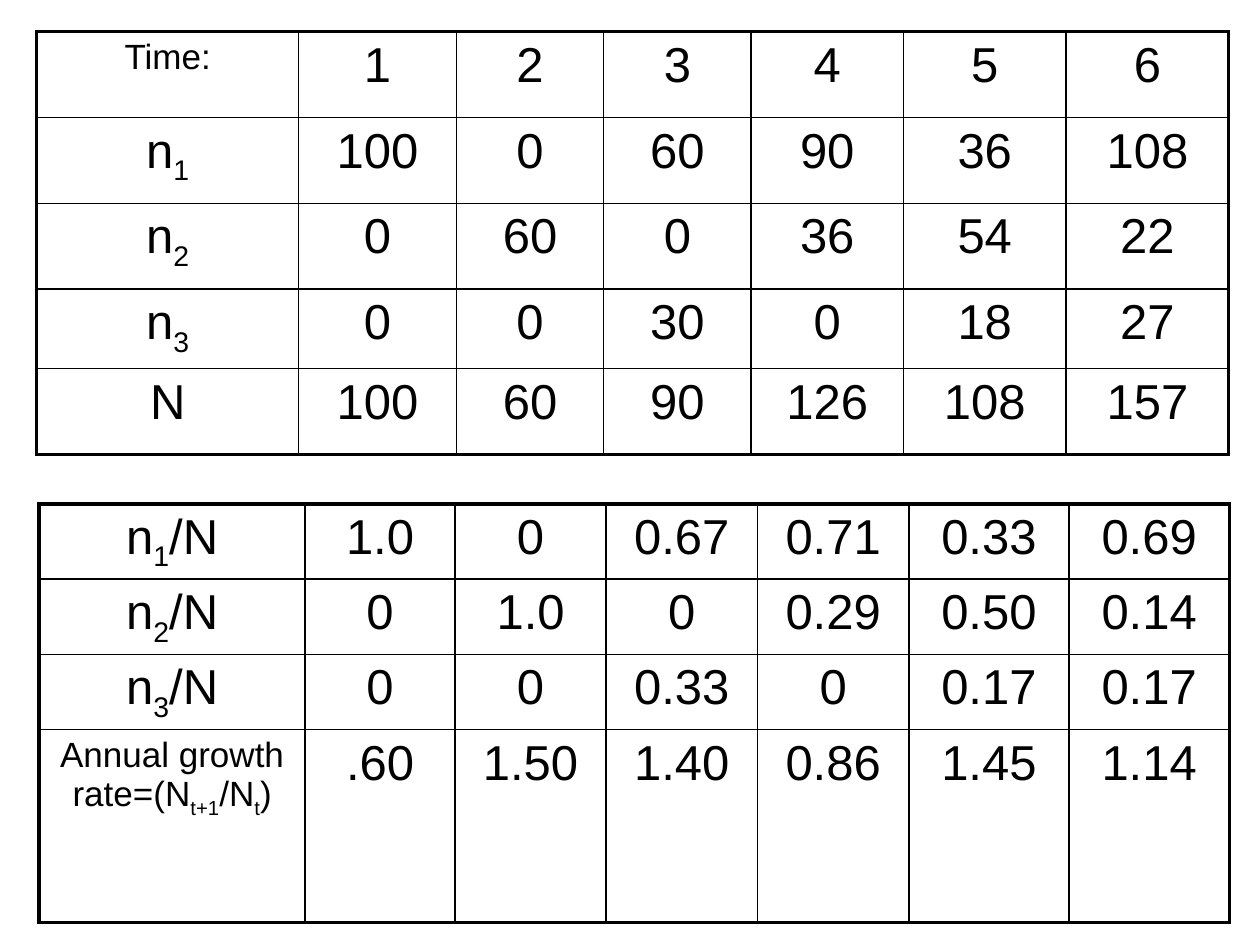
from dataclasses import dataclass

from lxml.etree import SubElement
from pptx import Presentation
from pptx.dml.color import RGBColor
from pptx.enum.text import PP_ALIGN
from pptx.oxml.ns import qn
from pptx.util import Cm, Pt


@dataclass(frozen=True)
class Theme:
    font: str = "Arial"
    ink: str = "000000"
    big: int = 28
    small: int = 20
    thin: float = 1
    thick: float = 2.25


THEME = Theme()

# Text between bars is set as a subscript
COUNTS = [
    ["Time:", "1", "2", "3", "4", "5", "6"],
    ["n|1|", "100", "0", "60", "90", "36", "108"],
    ["n|2|", "0", "60", "0", "36", "54", "22"],
    ["n|3|", "0", "0", "30", "0", "18", "27"],
    ["N", "100", "60", "90", "126", "108", "157"],
]
RATES = [
    ["n|1|/N", "1.0", "0", "0.67", "0.71", "0.33", "0.69"],
    ["n|2|/N", "0", "1.0", "0", "0.29", "0.50", "0.14"],
    ["n|3|/N", "0", "0", "0.33", "0", "0.17", "0.17"],
    ["Annual growth rate=(N|t+1|/N|t|)",
     ".60", "1.50", "1.40", "0.86", "1.45", "1.14"],
]
SMALL = {COUNTS[0][0], RATES[-1][0]}


def write(cell, text):
    """Fill a cell with centred text and its subscripts."""
    para = cell.text_frame.paragraphs[0]
    para.alignment = PP_ALIGN.CENTER
    para.font.name = THEME.font
    para.font.size = Pt(THEME.small if text in SMALL else THEME.big)
    para.font.color.rgb = RGBColor.from_string(THEME.ink)

    # Space before, as a share of the line
    props = para._p.get_or_add_pPr()
    gap = SubElement(props, qn("a:spcBef"))
    SubElement(gap, qn("a:spcPct"), val="20000")
    props.insert(0, gap)

    for i, part in enumerate(text.split("|")):
        if part:
            run = para.add_run()
            run.text = part
            if i % 2:
                run._r.get_or_add_rPr().set("baseline", "-25000")


def border(cell, edges):
    """Draw the four sides, thick where the side is an outer edge."""
    props = cell._tc.get_or_add_tcPr()
    for side, outer in edges.items():
        width = Pt(THEME.thick if outer else THEME.thin)
        line = SubElement(props, qn(f"a:ln{side}"), w=str(width))
        fill = SubElement(line, qn("a:solidFill"))
        SubElement(fill, qn("a:srgbClr"), val=THEME.ink)


def grid(slide, left, top, cols, rows, data):
    """Add a table with sizes in centimetres."""
    frame = slide.shapes.add_table(
        len(rows), len(cols), Cm(left), Cm(top), Cm(sum(cols)), Cm(sum(rows)))
    table = frame.table
    table.first_row = table.horz_banding = False
    for col, width in zip(table.columns, cols):
        col.width = Cm(width)
    for row, height in zip(table.rows, rows):
        row.height = Cm(height)
    for y, line in enumerate(data):
        for x, text in enumerate(line):
            cell = table.cell(y, x)
            write(cell, text)
            border(cell, {"L": x == 0, "R": x == len(cols) - 1,
                          "T": y == 0, "B": y == len(rows) - 1})
            cell.fill.background()


def main():
    deck = Presentation()
    deck.slide_width, deck.slide_height = Cm(25.4), Cm(19.05)
    slide = deck.slides.add_slide(deck.slide_layouts[6])

    # Shares of each class and yearly growth
    grid(slide, 0.79, 10.16, [5.36, 3.02, 3.05, 3.05, 3.05, 3.23, 3.23],
         [1.47, 1.45, 1.45, 3.89], RATES)

    # Counts of each class over time
    grid(slide, 0.74, 0.64, [5.28, 3.18, 2.97, 2.97, 3.07, 3.28, 3.28],
         [1.73, 1.73, 1.73, 1.6, 1.73], COUNTS)

    deck.save("out.pptx")


if __name__ == "__main__":
    main()
